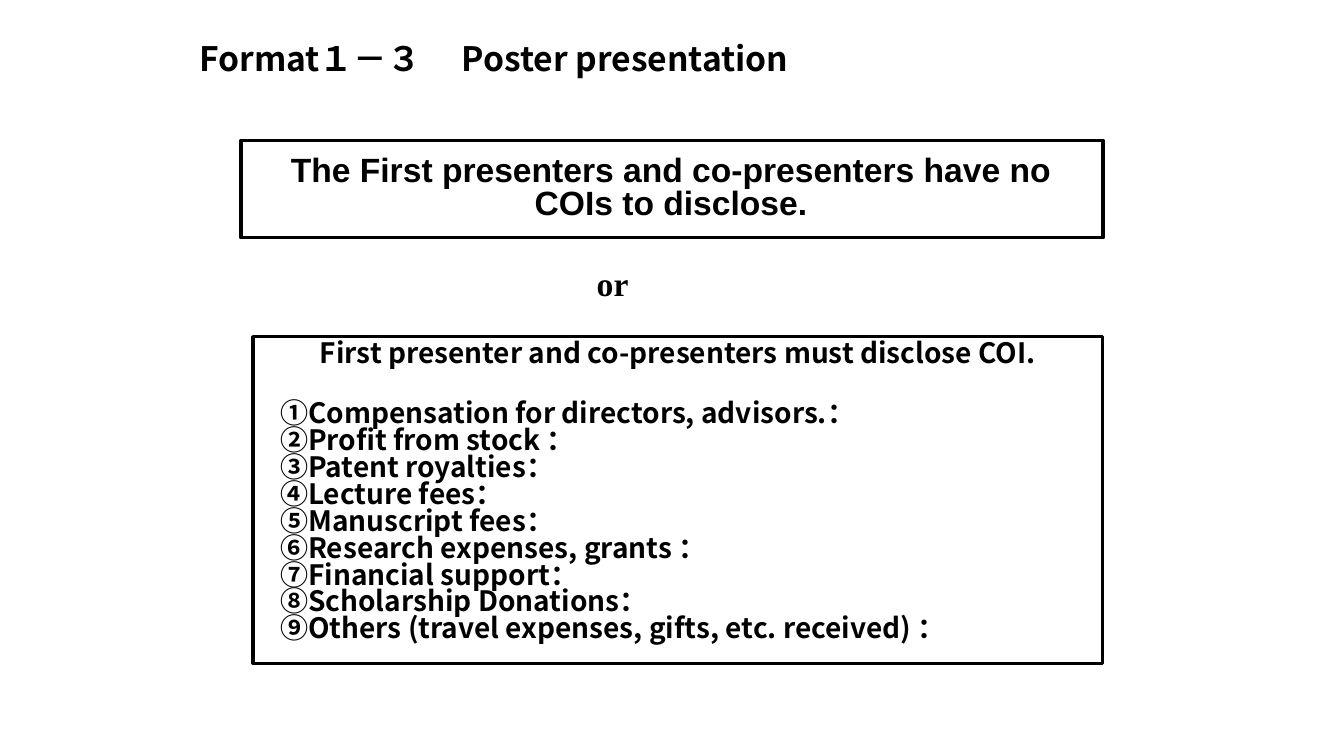
from dataclasses import dataclass

from lxml.etree import SubElement
from pptx import Presentation
from pptx.dml.color import RGBColor
from pptx.enum.shapes import MSO_SHAPE as Preset
from pptx.enum.text import MSO_ANCHOR as Anchor, PP_ALIGN as Align
from pptx.oxml.ns import qn
from pptx.slide import Slide
from pptx.util import Inches, Pt

BLACK = RGBColor(0, 0, 0)
SANS_CJK = "Noto Sans CJK JP"


@dataclass(frozen=True)
class Frame:
    left: float
    top: float
    width: float
    height: float


@dataclass(frozen=True)
class TextBlock:
    frame: Frame
    lines: tuple[str, ...]
    font: str = SANS_CJK
    size: int = 24
    align: Align = Align.LEFT
    spacing: float = 1.0
    anchor: Anchor = Anchor.TOP


DISCLOSURE_ITEMS = (
    "①Compensation for directors, advisors.：",
    "②Profit from stock ：",
    "③Patent royalties：",
    "④Lecture fees：",
    "⑤Manuscript fees：",
    "⑥Research expenses, grants ：",
    "⑦Financial support：",
    "⑧Scholarship Donations：",
    "⑨Others (travel expenses, gifts, etc. received) ：",
)

OUTLINES = (Frame(2.51, 3.34, 8.43, 3.24), Frame(2.39, 1.39, 8.55, 0.97))

TEXT_BLOCKS = (
    TextBlock(Frame(1.88, 0.33, 6.04, 0.5), ("Format１－３\u3000 Poster presentation".replace("\u3000", "　"),)),
    TextBlock(
        Frame(2.39, 1.51, 8.53, 0.75),
        ("The First presenters and co-presenters have no COIs to disclose.",),
        font="Arial", align=Align.CENTER, spacing=0.8,
    ),
    TextBlock(Frame(5.82, 2.56, 0.6, 0.5), ("or",), font="Times New Roman"),
    TextBlock(
        Frame(2.51, 3.34, 8.43, 0.4),
        ("First presenter and co-presenters must disclose COI.",),
        size=20, align=Align.CENTER, spacing=0.8,
    ),
    TextBlock(
        Frame(2.68, 3.93, 7.83, 2.52), DISCLOSURE_ITEMS,
        size=20, spacing=0.8, anchor=Anchor.MIDDLE,
    ),
)


def add_outline(page: Slide, frame: Frame) -> None:
    """Draw an unfilled rectangle with a black border."""
    box = page.shapes.add_shape(
        Preset.RECTANGLE, Inches(frame.left), Inches(frame.top),
        Inches(frame.width), Inches(frame.height),
    )
    box.shadow.inherit = False
    box.fill.background()
    box.line.color.rgb = BLACK
    box.line.width = Pt(2.25)


def add_text(page: Slide, block: TextBlock) -> None:
    """Add a bold text box with one paragraph per line."""
    frame = block.frame
    box = page.shapes.add_textbox(
        Inches(frame.left), Inches(frame.top), Inches(frame.width), Inches(frame.height)
    )
    body = box.text_frame
    body.word_wrap = True
    body.vertical_anchor = block.anchor
    body.text = "\n".join(block.lines)
    for para in body.paragraphs:
        para.alignment = block.align
        para.line_spacing = block.spacing
        para.font.size = Pt(block.size)
        para.font.bold = True
        para.font.color.rgb = BLACK
        para.font.name = block.font
        defaults = para._p.pPr.find(qn("a:defRPr"))
        SubElement(defaults, qn("a:ea")).set("typeface", block.font)


def main() -> None:
    """Build the disclosure slide and save it."""
    deck = Presentation()
    deck.slide_width, deck.slide_height = Inches(13.33), Inches(7.5)
    page = deck.slides.add_slide(deck.slide_layouts[6])
    for frame in OUTLINES:
        add_outline(page, frame)
    for block in TEXT_BLOCKS:
        add_text(page, block)
    deck.save("out.pptx")


if __name__ == "__main__":
    main()
